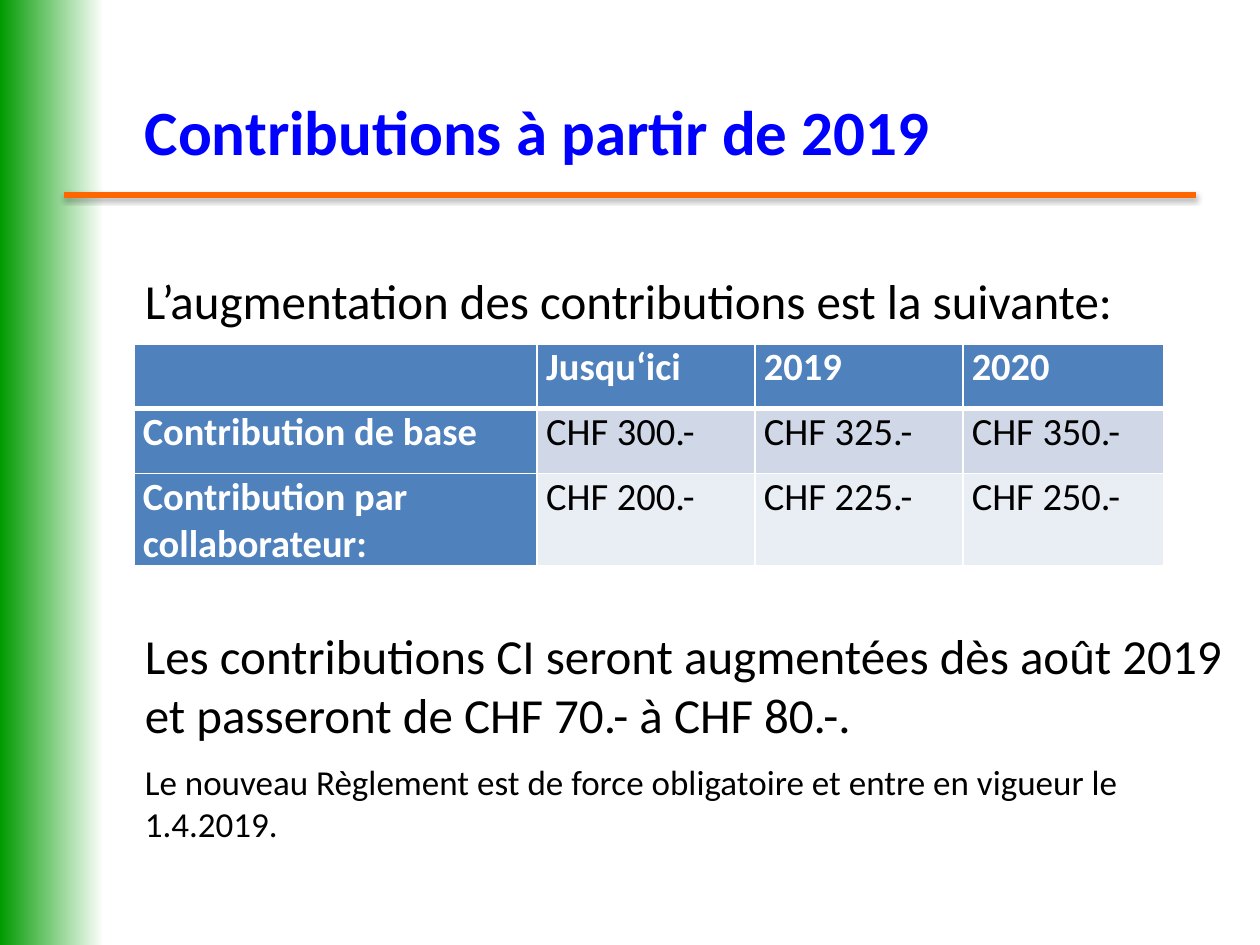
from dataclasses import dataclass

from pptx import Presentation
from pptx.dml.color import RGBColor as Rgb
from pptx.enum.shapes import MSO_CONNECTOR as Connector, MSO_SHAPE as Shape
from pptx.enum.text import MSO_ANCHOR as Anchor
from pptx.oxml import parse_xml
from pptx.oxml.ns import nsdecls
from pptx.util import Cm, Pt


@dataclass(frozen=True)
class Theme:
    font: str = "Calibri"
    title_size: int = 36
    body_size: int = 28
    table_size: int = 22
    note_size: int = 20
    title: str = "0000FF"
    text: str = "000000"
    white: str = "FFFFFF"
    green: str = "009B00"
    orange: str = "FF6600"
    header: str = "4F81BD"
    bands: tuple = ("D0D8E8", "E9EDF4")


class SlideBuilder:
    def __init__(self, slide, theme):
        self.slide = slide
        self.theme = theme

    def style(self, paragraph, size, color, bold=False):
        font = paragraph.font
        font.name, font.size, font.bold = self.theme.font, Pt(size), bold
        font.color.rgb = Rgb.from_string(color)

    def gradient_band(self, left, top, width, height, colors):
        band = self.slide.shapes.add_shape(
            Shape.RECTANGLE, Cm(left), Cm(top), Cm(width), Cm(height))
        band.shadow.inherit = False
        band.line.fill.background()
        band.fill.gradient()
        band.fill.gradient_angle = 0
        for stop, color, position in zip(band.fill.gradient_stops, colors, (0, 1)):
            stop.color.rgb = Rgb.from_string(color)
            stop.position = position

    def rule(self, left, right, y, color, weight):
        rule = self.slide.shapes.add_connector(
            Connector.STRAIGHT, Cm(left), Cm(y), Cm(right), Cm(y))
        rule.line.color.rgb = Rgb.from_string(color)
        rule.line.width = Pt(weight)
        rule.element.spPr.append(parse_xml(
            f'<a:effectLst {nsdecls("a")}>'
            f'<a:outerShdw blurRad="{Pt(3.1)}" dist="{Pt(1.6)}" dir="5400000">'
            '<a:srgbClr val="000000"><a:alpha val="38000"/></a:srgbClr>'
            '</a:outerShdw></a:effectLst>'))

    def text(self, left, top, width, height, paragraphs, anchor=Anchor.TOP):
        """Each paragraph is (wording, size, colour, bold, space before)."""
        frame = self.slide.shapes.add_textbox(
            Cm(left), Cm(top), Cm(width), Cm(height)).text_frame
        frame.word_wrap = True
        frame.vertical_anchor = anchor
        for index, (wording, size, color, bold, before) in enumerate(paragraphs):
            paragraph = frame.add_paragraph() if index else frame.paragraphs[0]
            paragraph.text = wording
            paragraph.space_before = Pt(before)
            self.style(paragraph, size, color, bold)

    def borders(self, cell, bottom):
        properties = cell._tc.get_or_add_tcPr()
        for side, weight in (("L", 1), ("R", 1), ("T", 1), ("B", bottom)):
            properties.append(parse_xml(
                f'<a:ln{side} {nsdecls("a")} w="{Pt(weight)}"><a:solidFill>'
                f'<a:srgbClr val="{self.theme.white}"/></a:solidFill></a:ln{side}>'))

    def table(self, left, top, widths, row_height, rows):
        theme = self.theme
        table = self.slide.shapes.add_table(
            len(rows), len(widths), Cm(left), Cm(top),
            Cm(sum(widths)), Cm(row_height * len(rows))).table
        table.first_col = True
        for column, width in zip(table.columns, widths):
            column.width = Cm(width)
        for r, row in enumerate(rows):
            table.rows[r].height = Cm(row_height)
            for c, wording in enumerate(row):
                cell = table.cell(r, c)
                heading = r == 0 or c == 0
                cell.margin_left = cell.margin_right = Cm(0.18)
                cell.margin_top = cell.margin_bottom = 0
                self.borders(cell, bottom=1 if r else 3)
                cell.fill.solid()
                cell.fill.fore_color.rgb = Rgb.from_string(
                    theme.header if heading else theme.bands[(r - 1) % 2])
                paragraph = cell.text_frame.paragraphs[0]
                paragraph.text = wording
                paragraph.space_before = paragraph.space_after = Pt(3)
                self.style(paragraph, theme.table_size,
                           theme.white if heading else theme.text, heading)


def main():
    theme = Theme()
    deck = Presentation()
    deck.slide_width, deck.slide_height = Cm(25.4), Cm(19.05)
    page = SlideBuilder(deck.slides.add_slide(deck.slide_layouts[6]), theme)

    # Green edge and orange rule
    page.gradient_band(0, 0, 2.1, 19.05, (theme.green, theme.white))
    page.rule(1.3, 24.1, 3.93, theme.orange, 3)

    # Title
    text_left = 2.67
    page.text(text_left, 1.52, 21.82, 2.2,
              [("Contributions à partir de 2019",
                theme.title_size, theme.title, True, 0)], Anchor.MIDDLE)

    # Introduction
    page.text(text_left, 5.33, 22.22, 1.4,
              [("L’augmentation des contributions est la suivante:",
                theme.body_size, theme.text, False, 0)])

    # Contribution table
    page.table(2.7, 6.93, (8.13, 4.39, 4.19, 4.06), 1.31, [
        ("", "Jusqu‘ici", "2019", "2020"),
        ("Contribution de base", "CHF 300.-", "CHF 325.-", "CHF 350.-"),
        ("Contribution par collaborateur:", "CHF 200.-", "CHF 225.-", "CHF 250.-"),
    ])

    # Closing remarks
    page.text(text_left, 12.48, 22.22, 4.6, [
        ("Les contributions CI seront augmentées dès août 2019 "
         "et passeront de CHF 70.- à CHF 80.-.",
         theme.body_size, theme.text, False, 0),
        ("Le nouveau Règlement est de force obligatoire "
         "et entre en vigueur le 1.4.2019.",
         theme.note_size, theme.text, False, 10),
    ])

    deck.save("out.pptx")


if __name__ == "__main__":
    main()
